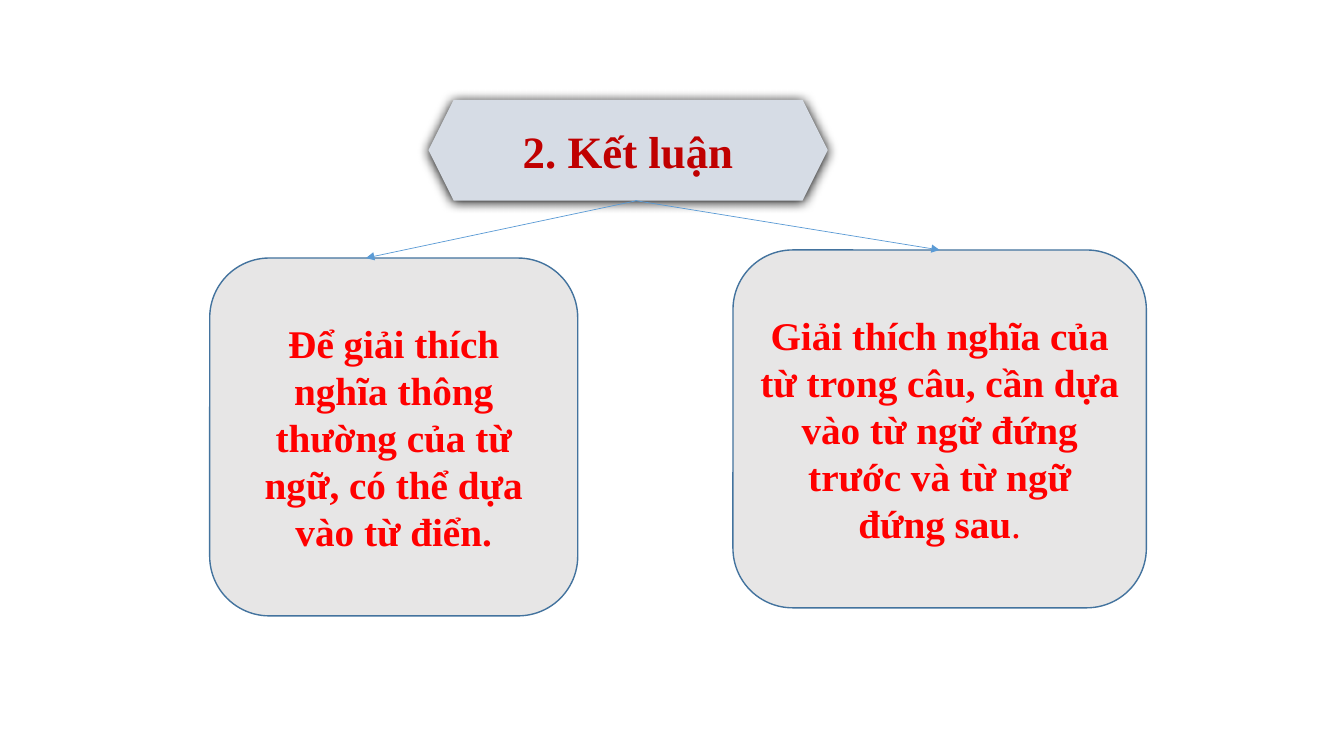
from dataclasses import dataclass

from lxml.etree import SubElement
from pptx import Presentation
from pptx.dml.color import RGBColor
from pptx.enum.shapes import MSO_CONNECTOR, MSO_SHAPE
from pptx.enum.text import MSO_ANCHOR, PP_ALIGN
from pptx.oxml.ns import qn
from pptx.util import Inches, Pt


@dataclass(frozen=True)
class Theme:
    font: str = "Times New Roman"
    heading_size: int = 32
    body_size: int = 28
    heading_text: str = "C00000"
    body_text: str = "FF0000"
    heading_fill: str = "D6DCE5"
    box_fill: str = "E7E6E6"
    box_line: str = "43739E"
    arrow: str = "5B9BD5"
    shadow: str = "000000"


THEME = Theme()


def add_panel(slide, kind, bounds, fill, line=None):
    """Add a filled shape, outlined only when a line colour is given."""
    panel = slide.shapes.add_shape(kind, *map(Inches, bounds))
    panel.shadow.inherit = False
    panel.fill.solid()
    panel.fill.fore_color.rgb = RGBColor.from_string(fill)
    if line:
        panel.line.color.rgb = RGBColor.from_string(line)
        panel.line.width = Pt(1)
    else:
        panel.line.fill.background()
    return panel


def write_centred(panel, text, size, color, plain_ending=""):
    """Write bold centred text, with an optional ending that is not bold."""
    frame = panel.text_frame
    frame.word_wrap = True
    frame.vertical_anchor = MSO_ANCHOR.MIDDLE
    paragraph = frame.paragraphs[0]
    paragraph.text = text
    paragraph.alignment = PP_ALIGN.CENTER
    if plain_ending:
        paragraph.add_run().text = plain_ending
    for position, run in enumerate(paragraph.runs):
        run.font.name = THEME.font
        run.font.size = Pt(size)
        run.font.bold = position == 0
        run.font.color.rgb = RGBColor.from_string(color)


def add_heading(slide, bounds, text):
    heading = add_panel(slide, MSO_SHAPE.HEXAGON, bounds, THEME.heading_fill)
    write_centred(heading, text, THEME.heading_size, THEME.heading_text)
    # Soft shadow just below the heading
    effects = heading._element.spPr.find(qn("a:effectLst"))
    shadow = SubElement(effects, qn("a:outerShdw"), blurRad=str(Pt(8.5)),
                        dist=str(Pt(1)), dir="5400000", algn="ctr", rotWithShape="0")
    SubElement(shadow, qn("a:srgbClr"), val=THEME.shadow)


def add_conclusion(slide, bounds, text, plain_ending=""):
    conclusion = add_panel(slide, MSO_SHAPE.ROUNDED_RECTANGLE, bounds,
                           THEME.box_fill, THEME.box_line)
    write_centred(conclusion, text, THEME.body_size, THEME.body_text, plain_ending)
    return conclusion


def add_arrow(slide, start, end):
    arrow = slide.shapes.add_connector(MSO_CONNECTOR.STRAIGHT,
                                       *map(Inches, start + end))
    arrow.line.color.rgb = RGBColor.from_string(THEME.arrow)
    arrow.line.width = Pt(0.5)
    SubElement(arrow.line._get_or_add_ln(), qn("a:tailEnd"), type="triangle")
    SubElement(arrow._element.spPr, qn("a:effectLst"))
    return arrow


def main():
    presentation = Presentation()
    presentation.slide_width = Inches(13.33)
    presentation.slide_height = Inches(7.5)
    slide = presentation.slides.add_slide(presentation.slide_layouts[6])

    # Heading
    add_heading(slide, (4.25, 0.99, 3.96, 1), "2. Kết luận")

    # Two conclusions
    add_conclusion(
        slide, (2.08, 2.56, 3.65, 3.55),
        "Để giải thích nghĩa thông thường của từ ngữ, có thể dựa vào từ điển.")
    words_in_sentence = add_conclusion(
        slide, (7.27, 2.48, 4.1, 3.55),
        "Giải thích nghĩa của từ trong câu, cần dựa vào từ ngữ đứng trước "
        "và từ ngữ đứng sau", plain_ending=".")

    # Arrows from the heading to the conclusions
    add_arrow(slide, (6.32, 1.99), (3.63, 2.56))
    sentence_arrow = add_arrow(slide, (6.3, 1.99), (9.32, 2.48))
    sentence_arrow.end_connect(words_in_sentence, 0)

    presentation.save("out.pptx")


if __name__ == "__main__":
    main()
